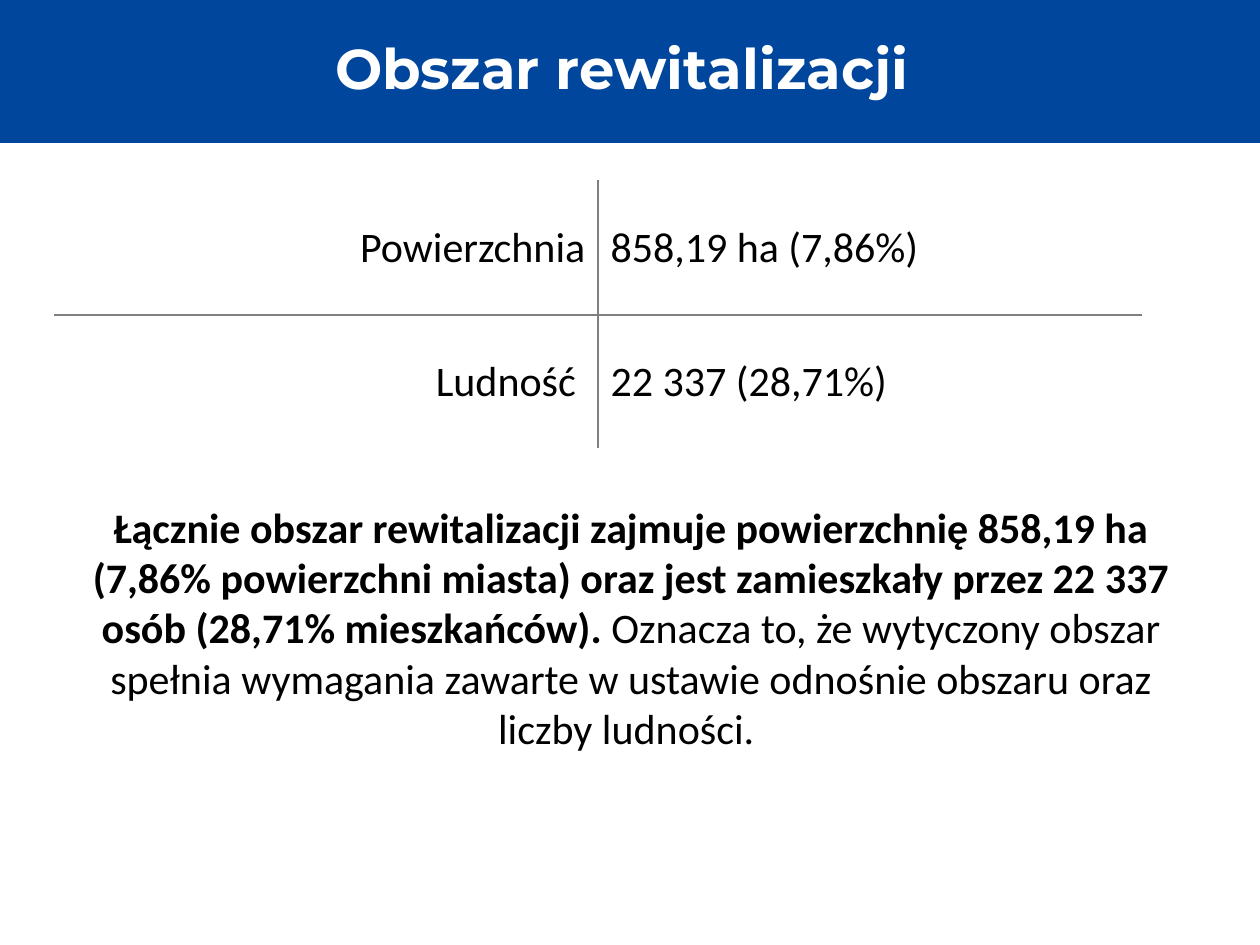
from lxml import etree
from pptx import Presentation
from pptx.dml.color import RGBColor
from pptx.enum.shapes import MSO_SHAPE
from pptx.enum.text import MSO_ANCHOR, PP_ALIGN
from pptx.oxml.ns import qn
from pptx.util import Pt

RECT = MSO_SHAPE.RECTANGLE
MID, TOP = MSO_ANCHOR.MIDDLE, MSO_ANCHOR.TOP
LEFT, RIGHT, CENTER = PP_ALIGN.LEFT, PP_ALIGN.RIGHT, PP_ALIGN.CENTER
SCALE = 914400 / 126


def px(n):
    """Turn pixels into EMU."""
    return round(n * SCALE)


def color(code):
    return RGBColor.from_string(code)


def write(para, text, font="Calibri", size=24, ink="000000", bold=False, align=LEFT):
    """Add one formatted run to a paragraph."""
    para.alignment = align
    run = para.add_run()
    run.text = text
    run.font.name = font
    run.font.size = Pt(size)
    run.font.bold = bold
    run.font.color.rgb = color(ink)


def border(cell, side, code):
    """Draw a 1 pt line on one side (L, R, T or B) of a cell."""
    props = cell._tc.get_or_add_tcPr()
    line = etree.SubElement(props, qn(f"a:ln{side}"), w=str(Pt(1)))
    fill = etree.SubElement(line, qn("a:solidFill"))
    etree.SubElement(fill, qn("a:srgbClr"), val=code)


class Deck:
    """Holds the style and the current slide."""

    blue, white, gray = "00469C", "FFFFFF", "808080"

    def __init__(self, wide, high):
        self.prs = Presentation()
        self.prs.slide_width, self.prs.slide_height = px(wide), px(high)
        self.slide = self.prs.slides.add_slide(self.prs.slide_layouts[6])

    def title(self, text, *box):
        bar = self.slide.shapes.add_shape(RECT, *map(px, box))
        bar.shadow.inherit = False
        bar.fill.solid()
        bar.fill.fore_color.rgb = color(self.blue)
        bar.line.fill.background()
        bar.text_frame.vertical_anchor = MID
        para = bar.text_frame.paragraphs[0]
        para.line_spacing = 0.9
        write(para, text, font="Montserrat", size=32, ink=self.white,
              bold=True, align=CENTER)

    def text(self, runs, *box):
        """Add a centred paragraph from (text, bold) pairs."""
        frame = self.slide.shapes.add_textbox(*map(px, box)).text_frame
        frame.word_wrap = True
        frame.vertical_anchor = TOP
        for words, bold in runs:
            write(frame.paragraphs[0], words, bold=bold, align=CENTER)

    def table(self, rows, *box):
        """Add a table that has inner lines only."""
        high, wide = len(rows), len(rows[0])
        grid = self.slide.shapes.add_table(high, wide, *map(px, box)).table
        grid.first_row = grid.horz_banding = False
        for r, row in enumerate(rows):
            for c, words in enumerate(row):
                cell = grid.cell(r, c)
                inner = {"L": c > 0, "R": c < wide - 1, "T": r > 0, "B": r < high - 1}
                for side, shown in inner.items():
                    if shown:
                        border(cell, side, self.gray)
                cell.fill.background()
                cell.vertical_anchor = MID
                write(cell.text_frame.paragraphs[0], words,
                      align=LEFT if c else RIGHT)


def main():
    deck = Deck(1260, 945)
    deck.title("Obszar rewitalizacji ", 0, 0, 1260, 143)
    deck.table([("Powierzchnia", "858,19 ha (7,86%)"),
                ("Ludność ", "22 337 (28,71%)")], 55, 181, 1086, 268)
    deck.text([
        ("Łącznie obszar rewitalizacji zajmuje powierzchnię 858,19 ha "
         "(7,86% powierzchni miasta) oraz jest zamieszkały przez 22 337 "
         "osób (28,71% mieszkańców). ", True),
        ("Oznacza to, że wytyczony obszar spełnia wymagania zawarte "
         "w ustawie odnośnie obszaru oraz liczby ludności. ", False),
    ], 72, 495, 1118, 343)
    deck.prs.save("out.pptx")


if __name__ == "__main__":
    main()
